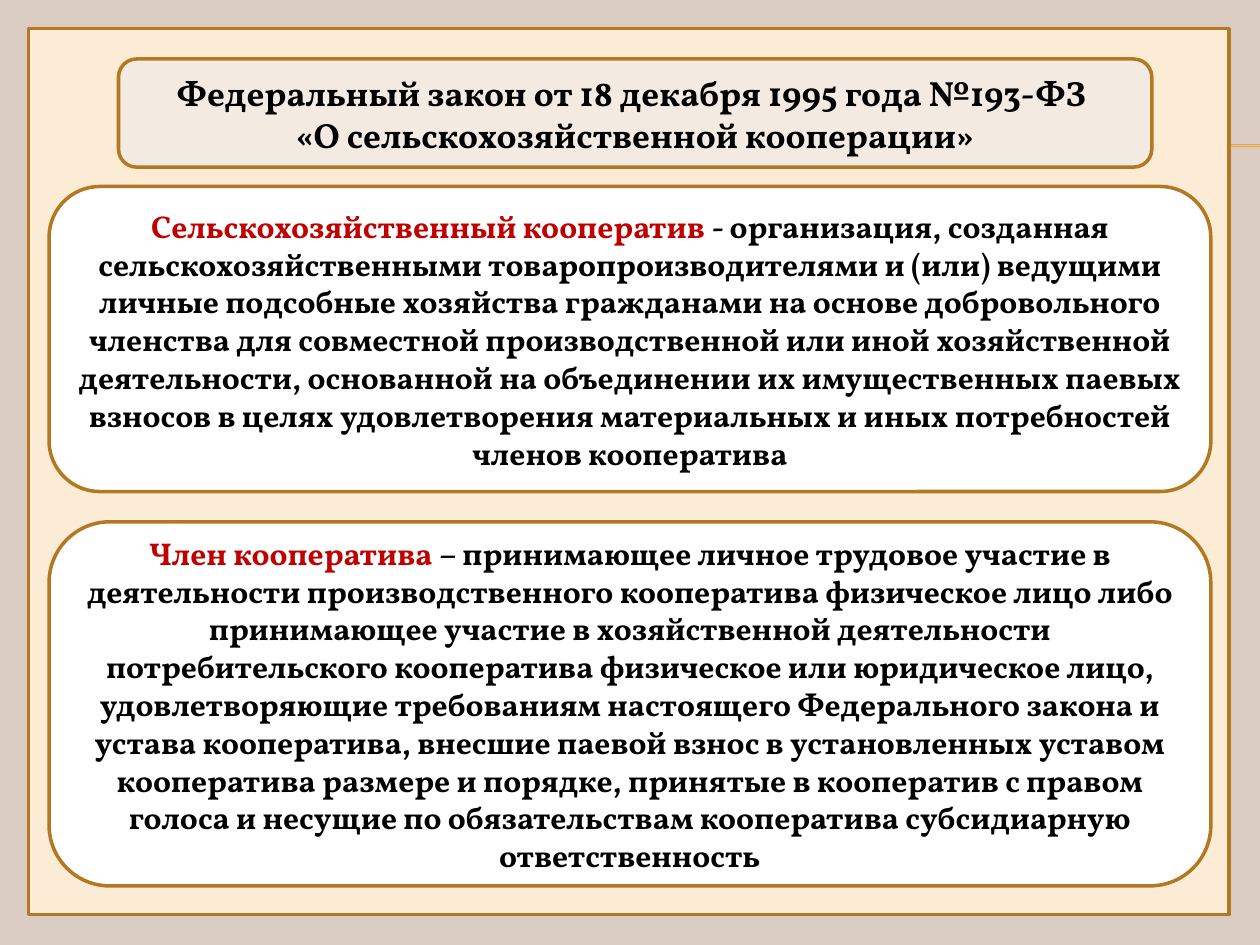
from dataclasses import dataclass

from pptx import Presentation
from pptx.dml.color import RGBColor
from pptx.enum import shapes, text
from pptx.oxml.ns import qn
from pptx.util import Cm, Pt
from lxml import etree

BACKDROP = RGBColor(0xDA, 0xCB, 0xC3)
CREAM = RGBColor(0xFC, 0xEC, 0xD5)
BEIGE = RGBColor(0xF3, 0xEA, 0xE2)
WHITE = RGBColor(0xFF, 0xFF, 0xFF)
BROWN = RGBColor(0xB2, 0x78, 0x22)
ORANGE = RGBColor(0xF0, 0xA2, 0x2E)
RED = RGBColor(0xC0, 0x00, 0x00)
BLACK = RGBColor(0x00, 0x00, 0x00)
FONT = "Vollkorn"

RECTANGLE = shapes.MSO_SHAPE.RECTANGLE
ROUNDED = shapes.MSO_SHAPE.ROUNDED_RECTANGLE
SLIDE_WIDTH, SLIDE_HEIGHT = 25.4, 19.05


@dataclass(frozen=True)
class Box:
    """A place on the slide, in centimetres."""
    left: float
    top: float
    width: float
    height: float

    def lengths(self) -> tuple:
        return tuple(Cm(v) for v in (self.left, self.top, self.width, self.height))


@dataclass(frozen=True)
class Definition:
    box: Box
    term: str
    meaning: str


FRAME = Box(0.58, 0.58, 24.2, 17.86)
TITLE_BOX = Box(2.39, 1.19, 20.83, 2.18)
TITLE_LINES = (
    "Федеральный закон от 18 декабря 1995 года №193-ФЗ ",
    "«О сельскохозяйственной кооперации»",
)
DEFINITIONS = (
    Definition(
        Box(0.99, 3.76, 23.42, 6.15),
        "Сельскохозяйственный кооператив ",
        "- организация, созданная сельскохозяйственными товаропроизводителями "
        "и (или) ведущими личные подсобные хозяйства гражданами на основе "
        "добровольного членства для совместной производственной или иной "
        "хозяйственной деятельности, основанной на объединении их имущественных "
        "паевых взносов в целях удовлетворения материальных и иных потребностей "
        "членов кооператива",
    ),
    Definition(
        Box(0.99, 10.52, 23.42, 7.34),
        "Член кооператива ",
        "– принимающее личное трудовое участие в деятельности производственного "
        "кооператива физическое лицо либо принимающее участие в хозяйственной "
        "деятельности потребительского кооператива физическое или юридическое "
        "лицо, удовлетворяющие требованиям настоящего Федерального закона и "
        "устава кооператива, внесшие паевой взнос в установленных уставом "
        "кооператива размере и порядке, принятые в кооператив с правом голоса и "
        "несущие по обязательствам кооператива субсидиарную ответственность",
    ),
)


def add_panel(slide, kind, box: Box, fill: RGBColor):
    shape = slide.shapes.add_shape(kind, *box.lengths())
    shape.shadow.inherit = False
    shape.fill.solid()
    shape.fill.fore_color.rgb = fill
    shape.line.color.rgb = BROWN
    shape.line.width = Pt(2)
    return shape


def add_rule(slide, top: float) -> None:
    rule = slide.shapes.add_connector(
        shapes.MSO_CONNECTOR.STRAIGHT, Cm(1.42), Cm(top), Cm(SLIDE_WIDTH), Cm(top))
    rule.line.color.rgb = ORANGE
    rule.line.width = Pt(0.75)
    etree.SubElement(rule._element.spPr, qn("a:effectLst"))


def write(frame, paragraphs, size: float) -> None:
    """Fill a text frame with centred paragraphs of (wording, colour) runs."""
    settings = {"word_wrap": True, "auto_size": text.MSO_AUTO_SIZE.NONE,
                "vertical_anchor": text.MSO_ANCHOR.MIDDLE}
    for name, value in settings.items():
        setattr(frame, name, value)
    for index, runs in enumerate(paragraphs):
        paragraph = frame.add_paragraph() if index else frame.paragraphs[0]
        paragraph.alignment = text.PP_ALIGN.CENTER
        for wording, color in runs:
            run = paragraph.add_run()
            run.text = wording
            for name, value in {"name": FONT, "size": Pt(size), "bold": True}.items():
                setattr(run.font, name, value)
            run.font.color.rgb = color


def add_title(slide) -> None:
    add_panel(slide, ROUNDED, TITLE_BOX, BEIGE)
    title = slide.shapes.title
    title.left, title.top, title.width, title.height = TITLE_BOX.lengths()
    write(title.text_frame, [[(line, BLACK)] for line in TITLE_LINES], 20)
    slide.shapes._spTree.append(title._element)  # in front of its panel


def add_definition(slide, definition: Definition) -> None:
    panel = add_panel(slide, ROUNDED, definition.box, WHITE)
    runs = [(definition.term, RED), (definition.meaning, BLACK)]
    write(panel.text_frame, [runs], 18)


def main() -> None:
    presentation = Presentation()
    presentation.slide_width = Cm(SLIDE_WIDTH)
    presentation.slide_height = Cm(SLIDE_HEIGHT)
    slide = presentation.slides.add_slide(
        presentation.slide_layouts.get_by_name("Title Only"))
    slide.background.fill.solid()
    slide.background.fill.fore_color.rgb = BACKDROP

    for top in (2.92, 2.95):
        add_rule(slide, top)
    add_panel(slide, RECTANGLE, FRAME, CREAM)
    add_title(slide)
    for definition in DEFINITIONS:
        add_definition(slide, definition)
    presentation.save("out.pptx")


if __name__ == "__main__":
    main()
